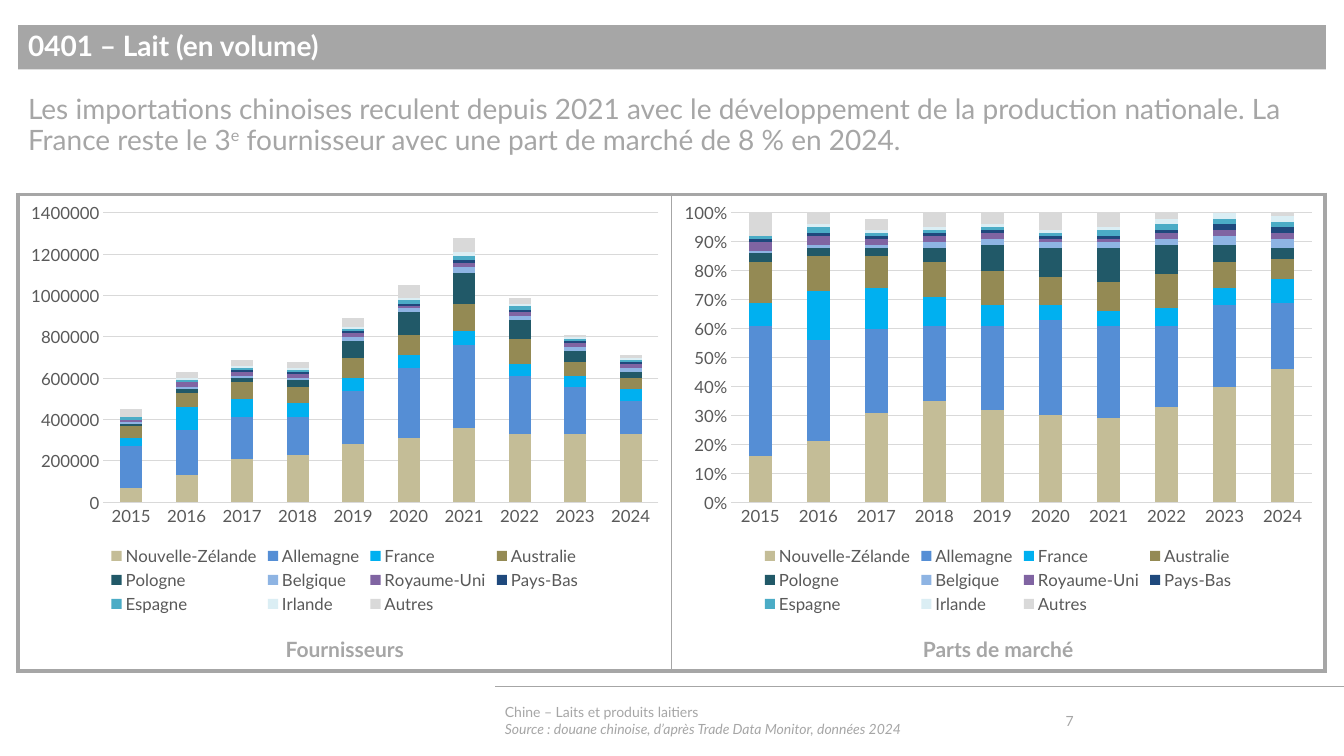
from lxml import etree
from pptx import Presentation
from pptx.chart.data import CategoryChartData
from pptx.dml.color import RGBColor
from pptx.enum import chart as ch, shapes, text
from pptx.oxml.ns import qn
from pptx.util import Inches, Pt

GREY = RGBColor(0xA6, 0xA6, 0xA6)
WHITE = RGBColor(0xFF, 0xFF, 0xFF)
BLACK = RGBColor(0, 0, 0)
LABEL = RGBColor(0x59, 0x59, 0x59)
GRID = RGBColor(0xD9, 0xD9, 0xD9)
FONT = "Lato"

TITLE = "0401 – Lait (en volume)"
MESSAGE = [
    ("Les importations chinoises reculent depuis 2021 avec le développement de la "
     "production nationale. La France reste le 3", {}),
    ("e", {"sup": True}),
    (" fournisseur avec une part de marché de 8 % en 2024.", {}),
]
FOOTER = [
    "Chine – Laits et produits laitiers",
    [("Source : douane chinoise, d’après Trade Data Monitor, données 2024", {"italic": True})],
]
PAGE = "7"
YEARS = [str(y) for y in range(2015, 2025)]
COUNTRIES = [
    ("Nouvelle-Zélande", RGBColor(0xC4, 0xBD, 0x97)),
    ("Allemagne", RGBColor(0x55, 0x8E, 0xD5)),
    ("France", RGBColor(0x00, 0xB0, 0xF0)),
    ("Australie", RGBColor(0x94, 0x8A, 0x54)),
    ("Pologne", RGBColor(0x21, 0x59, 0x68)),
    ("Belgique", RGBColor(0x8E, 0xB4, 0xE3)),
    ("Royaume-Uni", RGBColor(0x80, 0x64, 0xA2)),
    ("Pays-Bas", RGBColor(0x1F, 0x49, 0x7D)),
    ("Espagne", RGBColor(0x4B, 0xAC, 0xC6)),
    ("Irlande", RGBColor(0xDB, 0xEE, 0xF4)),
    ("Autres", GRID),
]
VOLUMES = [
    [70000, 130000, 210000, 230000, 280000, 310000, 360000, 330000, 330000, 330000],
    [200000, 220000, 200000, 180000, 260000, 340000, 400000, 280000, 230000, 160000],
    [40000, 110000, 90000, 70000, 60000, 60000, 70000, 60000, 50000, 60000],
    [60000, 70000, 80000, 80000, 100000, 100000, 130000, 120000, 70000, 50000],
    [10000, 20000, 20000, 30000, 80000, 110000, 150000, 90000, 50000, 30000],
    [10000, 10000, 10000, 10000, 20000, 20000, 30000, 20000, 20000, 20000],
    [10000, 20000, 20000, 20000, 20000, 10000, 20000, 20000, 20000, 20000],
    [0, 0, 10000, 10000, 10000, 10000, 10000, 10000, 10000, 10000],
    [10000, 10000, 10000, 10000, 10000, 20000, 20000, 20000, 10000, 10000],
    [0, 10000, 10000, 10000, 10000, 10000, 20000, 10000, 10000, 10000],
    [40000, 30000, 30000, 30000, 40000, 60000, 70000, 30000, 10000, 10000],
]
SHARES = [
    [0.16, 0.21, 0.31, 0.35, 0.32, 0.3, 0.29, 0.33, 0.4, 0.46],
    [0.45, 0.35, 0.29, 0.26, 0.29, 0.33, 0.32, 0.28, 0.28, 0.23],
    [0.08, 0.17, 0.14, 0.1, 0.07, 0.05, 0.05, 0.06, 0.06, 0.08],
    [0.14, 0.12, 0.11, 0.12, 0.12, 0.1, 0.1, 0.12, 0.09, 0.07],
    [0.03, 0.03, 0.03, 0.05, 0.09, 0.1, 0.12, 0.1, 0.06, 0.04],
    [0.01, 0.01, 0.01, 0.02, 0.02, 0.02, 0.02, 0.02, 0.03, 0.03],
    [0.03, 0.03, 0.02, 0.02, 0.02, 0.01, 0.01, 0.02, 0.02, 0.02],
    [0.01, 0.01, 0.01, 0.01, 0.01, 0.01, 0.01, 0.01, 0.02, 0.02],
    [0.01, 0.02, 0.01, 0.01, 0.01, 0.01, 0.02, 0.02, 0.02, 0.02],
    [0, 0.01, 0.01, 0.01, 0.01, 0.01, 0.01, 0.02, 0.02, 0.02],
    [0.09, 0.05, 0.04, 0.05, 0.05, 0.06, 0.05, 0.03, 0.02, 0.01],
]
LEFT, TOP, PANEL_W, PANEL_H, CHART_H = 0.18, 1.93, 6.48, 4.73, 4.2
PANELS = [
    ("Fournisseurs", VOLUMES, "General", 1400000, 200000),
    ("Parts de marché", SHARES, "0%", 1, 0.1),
]


def box(x, y, w, h):
    return Inches(x), Inches(y), Inches(w), Inches(h)


def set_font(f, size, color, bold=False, italic=False):
    f.name, f.size, f.bold, f.italic = FONT, Pt(size), bold, italic
    f.color.rgb = color


def add_text(slide, lines, at, size=20, color=GREY, bold=False, fill=None, spacing=1.0,
             align=text.PP_ALIGN.LEFT, anchor=text.MSO_ANCHOR.TOP, grow=False):
    if fill is None:
        sp = slide.shapes.add_textbox(*box(*at))
    else:
        sp = slide.shapes.add_shape(shapes.MSO_SHAPE.RECTANGLE, *box(*at))
        sp.shadow.inherit = False
        sp.fill.solid()
        sp.fill.fore_color.rgb = fill
        sp.line.fill.background()
    tf = sp.text_frame
    tf.word_wrap = True
    tf.vertical_anchor = anchor
    if grow:
        tf.auto_size = text.MSO_AUTO_SIZE.SHAPE_TO_FIT_TEXT
    for i, line in enumerate(lines):
        p = tf.add_paragraph() if i else tf.paragraphs[0]
        p.alignment = align
        p.line_spacing = spacing
        for words, style in [(line, {})] if isinstance(line, str) else line:
            r = p.add_run()
            r.text = words
            set_font(r.font, size, color, bold, style.get("italic", False))
            if style.get("sup"):
                r.font._element.set("baseline", "30000")


def add_rule(slide, x1, x2, y):
    c = slide.shapes.add_connector(shapes.MSO_CONNECTOR.STRAIGHT,
                                   Inches(x1), Inches(y), Inches(x2), Inches(y))
    c.line.color.rgb = GREY
    c.line.width = Pt(0.5)
    etree.SubElement(c._element.spPr, qn("a:effectLst"))


def add_frame(slide):
    t = slide.shapes.add_table(1, 2, *box(LEFT, TOP, 2 * PANEL_W, PANEL_H)).table
    t.first_row = t.horz_banding = False
    for i, cell in enumerate(t.rows[0].cells):
        tc_pr = cell._tc.get_or_add_tcPr()
        for side, width in (("L", 1 if i else 3), ("R", 3 if i else 1), ("T", 3), ("B", 3)):
            ln = etree.SubElement(tc_pr, qn("a:ln" + side), w=str(Pt(width)))
            solid = etree.SubElement(ln, qn("a:solidFill"))
            etree.SubElement(solid, qn("a:srgbClr"), val=str(GREY))
        cell.fill.background()


def add_columns(slide, at, rows, fmt, top, step):
    data = CategoryChartData(number_format=fmt)
    data.categories = YEARS
    for (name, _), values in zip(COUNTRIES, rows):
        data.add_series(name, values)
    c = slide.shapes.add_chart(ch.XL_CHART_TYPE.COLUMN_STACKED, *box(*at), data).chart
    set_font(c.font, 12, BLACK)
    c.has_title = False
    c.has_legend = True
    c.legend.position = ch.XL_LEGEND_POSITION.BOTTOM
    c.legend.include_in_layout = False
    set_font(c.legend.font, 12, LABEL)
    plot = c.plots[0]
    plot.gap_width, plot.overlap, plot.vary_by_categories = 150, 100, False
    for series, (_, color) in zip(plot.series, COUNTRIES):
        series.format.fill.solid()
        series.format.fill.fore_color.rgb = color
    cat, val = c.category_axis, c.value_axis
    for axis in (cat, val):
        axis.major_tick_mark = axis.minor_tick_mark = ch.XL_TICK_MARK.NONE
        set_font(axis.tick_labels.font, 12, LABEL)
    val.minimum_scale, val.maximum_scale, val.major_unit = 0, top, step
    val.tick_labels.number_format = fmt
    val.tick_labels.number_format_is_linked = False
    val.format.line.fill.background()
    val.has_major_gridlines = True
    for line in (cat.format.line, val.major_gridlines.format.line):
        line.color.rgb = GRID
        line.width = Pt(0.75)


def main():
    prs = Presentation()
    prs.slide_width, prs.slide_height = Inches(13.33), Inches(7.5)
    s = prs.slides.add_slide(prs.slide_layouts[6])
    middle = text.MSO_ANCHOR.MIDDLE
    add_rule(s, 13.33, 4.91, 6.81)
    add_frame(s)
    add_text(s, [TITLE], (LEFT, 0.25, 12.97, 0.44), color=WHITE, bold=True, fill=GREY,
             spacing=0.9, anchor=middle)
    add_text(s, [MESSAGE], (LEFT, 0.9, 12.96, 0.81), spacing=0.9)
    for i, (caption, *chart) in enumerate(PANELS):
        x = LEFT + i * PANEL_W
        add_text(s, [caption], (x, 6.27, PANEL_W, 0.35), size=15, bold=True,
                 align=text.PP_ALIGN.CENTER, grow=True)
        add_columns(s, (x, TOP, PANEL_W, CHART_H), *chart)
    add_text(s, FOOTER, (4.91, 6.95, 5.43, 0.4), size=10, anchor=middle)
    add_text(s, [PAGE], (10.47, 6.95, 0.99, 0.4), size=10, anchor=middle)
    prs.save("out.pptx")


if __name__ == "__main__":
    main()
